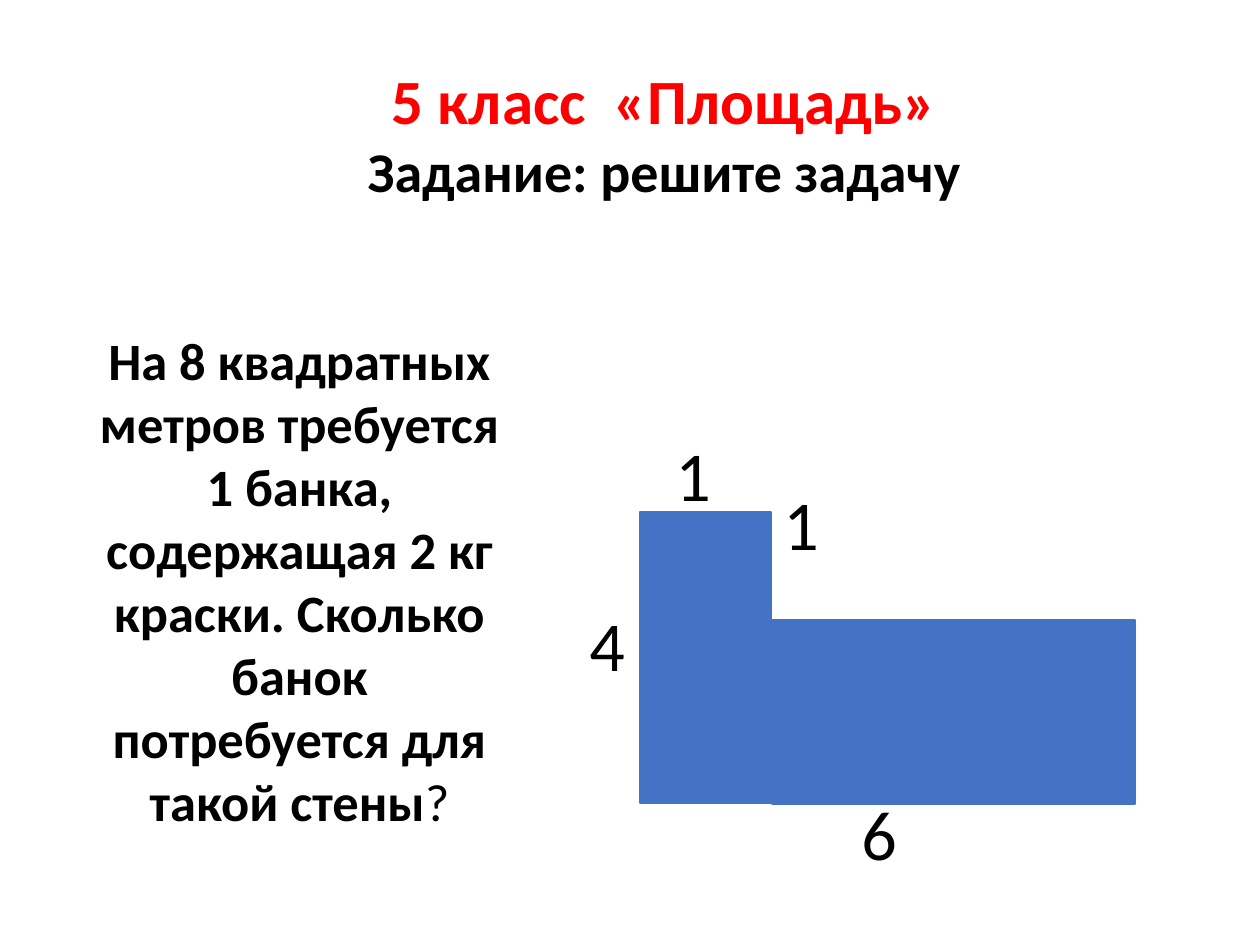
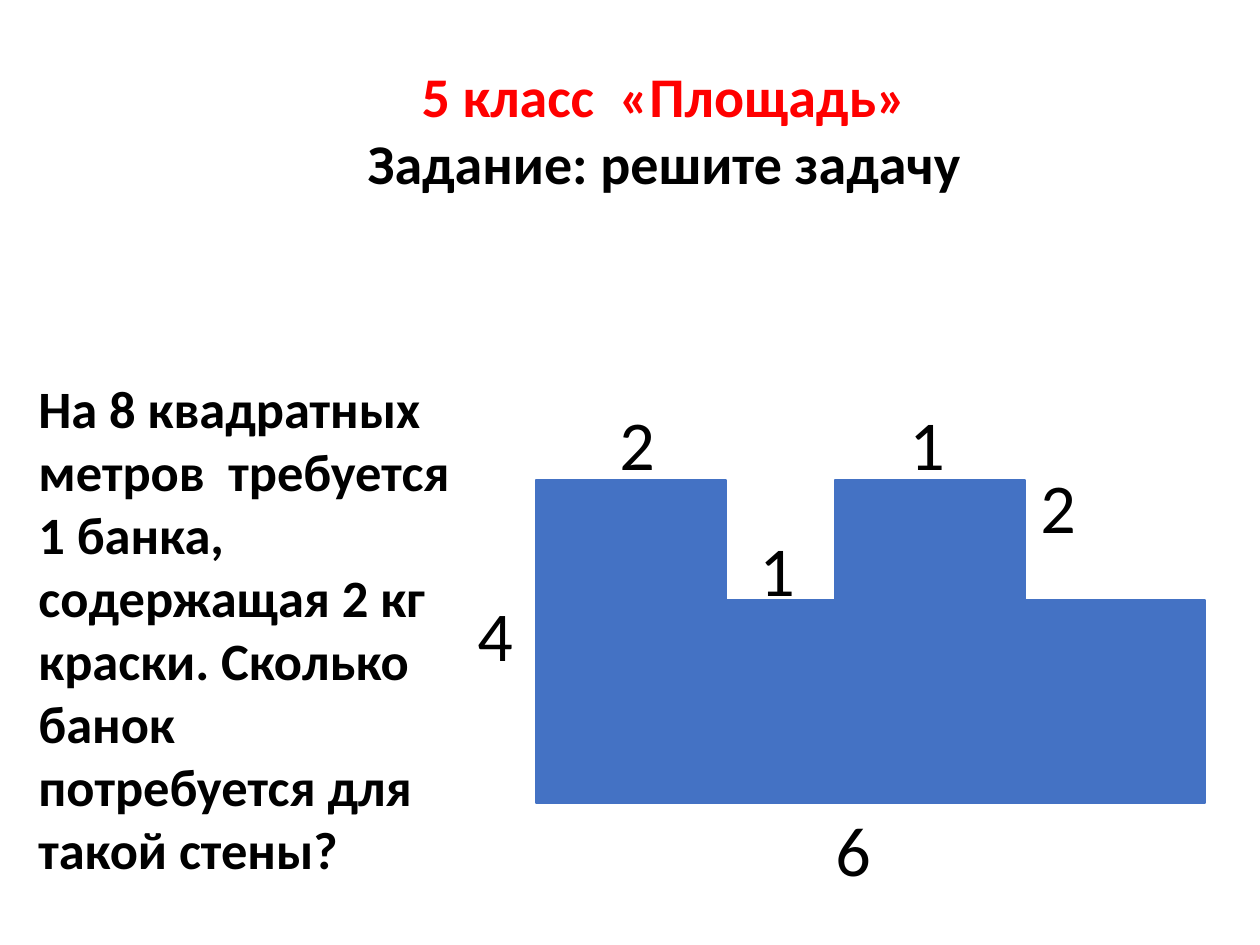
from pptx import Presentation
from pptx.dml.color import RGBColor
from pptx.enum.shapes import MSO_SHAPE
from pptx.enum.text import MSO_ANCHOR, MSO_AUTO_SIZE, PP_ALIGN
from pptx.util import Pt

RED = RGBColor(0xFF, 0x00, 0x00)
BLACK = RGBColor(0x00, 0x00, 0x00)
BLUE = RGBColor(0x44, 0x72, 0xC4)
WHITE = RGBColor(0xFF, 0xFF, 0xFF)

HEAD = "5 класс  «Площадь»"
TASK = "Задание: решите задачу"
LABEL = (118, 97)

# Boxes are left, top, width, height in px; labels are text, left, top
PAGES = [
    {
        "head_size": 36,
        "title_box": (223, 55, 883, 158),
        "story_box": (75, 322, 449, 522),
        "align": PP_ALIGN.CENTER,
        "story": [
            ("На 8 квадратных метров требуется 1 банка, содержащая 2 кг краски. "
             "Сколько банок потребуется для такой стены", True),
            ("?", False),
        ],
        "wall": [(640, 512, 131, 291), (772, 620, 363, 184)],
        "labels": [("1", 663, 425), ("1", 771, 474), ("4", 577, 595), ("6", 849, 784)],
    },
    {
        "head_size": 32,
        "title_box": (223, 55, 883, 149),
        "story_box": (26, 370, 447, 522),
        "align": PP_ALIGN.LEFT,
        "story": [
            ("На 8 квадратных метров  требуется 1 банка, содержащая 2 кг краски. "
             "Сколько банок потребуется для такой стены?", True),
        ],
        "wall": [(536, 480, 190, 323), (726, 600, 479, 203), (835, 480, 190, 323)],
        "labels": [("6", 823, 800), ("4", 465, 585), ("2", 607, 394), ("1", 747, 520),
                   ("1", 897, 394), ("2", 1028, 457)],
    },
]

FRAME = {"word_wrap": True, "auto_size": MSO_AUTO_SIZE.NONE,
         "vertical_anchor": MSO_ANCHOR.TOP}


def emu(px):
    return round(px * 914400 / 126)


def style(item, values):
    for name, value in values.items():
        setattr(item, name, value)


def place(shape, box):
    style(shape, dict(zip(("left", "top", "width", "height"), map(emu, box))))


def write(shape, paras, align):
    """Fill a shape with paragraphs of (text, size, bold, colour) runs."""
    frame = shape.text_frame
    style(frame, FRAME)
    for i, runs in enumerate(paras):
        para = frame.add_paragraph() if i else frame.paragraphs[0]
        para.alignment = align
        for text, size, bold, color in runs:
            run = para.add_run()
            run.text = text
            style(run.font, {"name": "Calibri", "size": Pt(size), "bold": bold})
            run.font.color.rgb = color


def add_text(slide, box, runs, align):
    write(slide.shapes.add_textbox(*map(emu, box)), [runs], align)


def add_wall(slide, boxes):
    group = slide.shapes.add_group_shape()
    for box in boxes:
        part = group.shapes.add_shape(MSO_SHAPE.RECTANGLE, *map(emu, box))
        part.shadow.inherit = False
        part.fill.solid()
        part.fill.fore_color.rgb = BLUE
        part.line.color.rgb = BLUE
        part.line.width = Pt(1)


def add_page(deck, page):
    slide = deck.slides.add_slide(deck.slide_layouts[5])
    slide.background.fill.solid()
    slide.background.fill.fore_color.rgb = WHITE
    title = slide.shapes.title
    place(title, page["title_box"])
    lines = [[(HEAD, page["head_size"], True, RED)], [(TASK, 32, True, BLACK)]]
    write(title, lines, PP_ALIGN.CENTER)
    story = [(text, 30, bold, BLACK) for text, bold in page["story"]]
    add_text(slide, page["story_box"], story, page["align"])
    add_wall(slide, page["wall"])
    for text, left, top in page["labels"]:
        add_text(slide, (left, top, *LABEL), [(text, 40, False, BLACK)], PP_ALIGN.LEFT)


def main():
    deck = Presentation()
    style(deck, {"slide_width": emu(1260), "slide_height": emu(945)})
    for page in PAGES:
        add_page(deck, page)
    deck.save("out.pptx")


if __name__ == "__main__":
    main()
